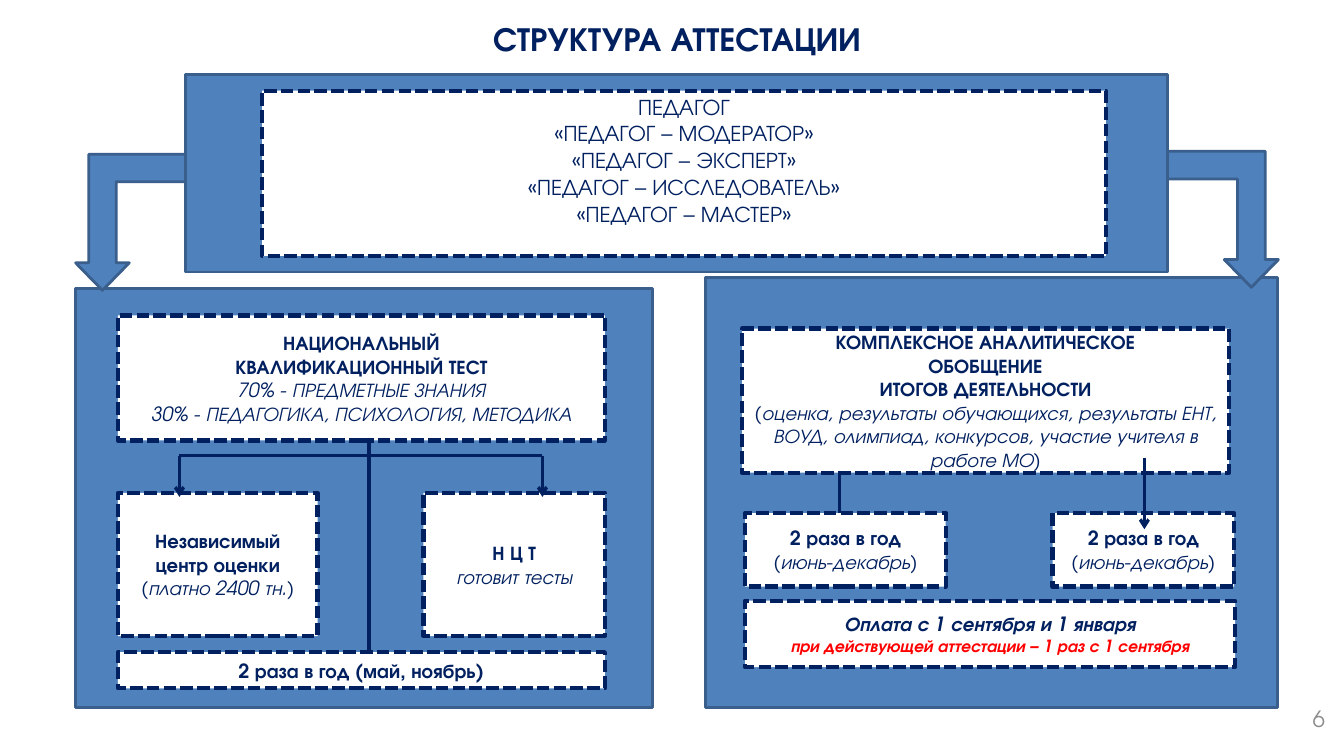
from pptx import Presentation
from pptx.dml.color import RGBColor
from pptx.enum.dml import MSO_LINE
from pptx.enum.shapes import MSO_CONNECTOR, MSO_SHAPE
from pptx.enum.text import MSO_ANCHOR, PP_ALIGN
from pptx.oxml.ns import qn
from pptx.util import Inches, Pt
from lxml.etree import SubElement

FONT = "TeX Gyre Adventor"
NAVY, BLUE, EDGE = "002060", "4F81BD", "3A5F8C"
WHITE, RED, GREY = "FFFFFF", "FF0000", "8C8C8C"


def color(value):
    return RGBColor.from_string(value)


def text(content, size=14, color=NAVY, bold=False, italic=False):
    """Describe one paragraph and its format."""
    return {"content": content, "size": size, "color": color,
            "bold": bold, "italic": italic}


class SlideBuilder:
    def __init__(self, slide):
        self.shapes = slide.shapes

    def set_text(self, sp, lines, align=PP_ALIGN.CENTER, anchor=MSO_ANCHOR.MIDDLE):
        tf = sp.text_frame
        tf.word_wrap = True
        tf.vertical_anchor = anchor
        for i, line in enumerate(lines):
            p = tf.add_paragraph() if i else tf.paragraphs[0]
            p.alignment = align
            r = p.add_run()
            r.text = line["content"]
            r.font.name = FONT
            r.font.size = Pt(line["size"])
            r.font.bold = line["bold"]
            r.font.italic = line["italic"]
            r.font.color.rgb = color(line["color"])

    def shape(self, kind, at, fill, edge=None, width=2):
        sp = self.shapes.add_shape(kind, *map(Inches, at))
        sp.shadow.inherit = False
        sp.fill.solid()
        sp.fill.fore_color.rgb = color(fill)
        if edge:
            sp.line.color.rgb = color(edge)
            sp.line.width = Pt(width)
        else:
            sp.line.fill.background()
        return sp

    def panel(self, *at):
        self.shape(MSO_SHAPE.RECTANGLE, at, BLUE, EDGE)

    def title(self, at, line):
        self.set_text(self.shape(MSO_SHAPE.RECTANGLE, at, WHITE), [line])

    def card(self, at, *lines, anchor=MSO_ANCHOR.MIDDLE):
        """White box with a dashed navy border."""
        sp = self.shape(MSO_SHAPE.RECTANGLE, at, WHITE, NAVY, 3)
        sp.line.dash_style = MSO_LINE.SQUARE_DOT
        self.set_text(sp, lines, anchor=anchor)
        return sp

    def bent_arrow(self, at, to_right=False):
        sp = self.shape(MSO_SHAPE.BENT_UP_ARROW, at, BLUE, EDGE)
        for i, value in enumerate((0.25, 0.244, 0.25)):
            sp.adjustments[i] = value
        sp.rotation = 180
        if to_right:
            sp.element.spPr.find(qn("a:xfrm")).set("flipH", "1")

    def line(self, x1, y1, x2, y2, arrow=True):
        c = self.shapes.add_connector(MSO_CONNECTOR.STRAIGHT,
                                      *map(Inches, (x1, y1, x2, y2)))
        c.line.color.rgb = color(NAVY)
        c.line.width = Pt(2.25)
        spPr = c.element.spPr
        if arrow:
            SubElement(spPr.find(qn("a:ln")), qn("a:tailEnd"), type="arrow")
        SubElement(spPr, qn("a:effectLst"))

    def label(self, at, line, align):
        self.set_text(self.shapes.add_textbox(*map(Inches, at)), [line], align)


def build_header(s):
    s.title((0.75, 0.22, 11.93, 0.31), text("СТРУКТУРА АТТЕСТАЦИИ", 24, bold=True))
    levels = ["ПЕДАГОГ"] + [f"«ПЕДАГОГ – {level}»" for level in
                            ("МОДЕРАТОР", "ЭКСПЕРТ", "ИССЛЕДОВАТЕЛЬ", "МАСТЕР")]
    sp = s.card((2.6, 0.9, 8.37, 1.64), *[text(level, 16) for level in levels],
                anchor=MSO_ANCHOR.TOP)
    sp.text_frame.margin_top = Inches(0.02)


def build_test_side(s):
    left, width = 1.17, 4.83
    s.card((left, 3.13, width, 1.24),
           text("НАЦИОНАЛЬНЫЙ", bold=True),
           text("КВАЛИФИКАЦИОННЫЙ ТЕСТ", bold=True),
           text("70% - ПРЕДМЕТНЫЕ ЗНАНИЯ", italic=True),
           text("30% - ПЕДАГОГИКА, ПСИХОЛОГИЯ, МЕТОДИКА", italic=True))
    s.card((left, 4.89, 1.98, 1.42),
           text("Независимый центр оценки", bold=True),
           text("(платно 2400 тн.)", italic=True))
    s.card((4.2, 4.89, 1.8, 1.42),
           text("Н Ц Т", bold=True), text("готовит тесты", italic=True))
    s.line(3.66, 4.37, 3.66, 6.59)
    s.card((left, 6.47, width, 0.36), text("2 раза в год (май, ноябрь)", bold=True))
    s.bent_arrow((0.75, 1.53, 1.09, 1.35))
    branches, bar = (1.78, 5.38), 4.52
    s.line(branches[0], bar, branches[1], bar, arrow=False)
    for x in branches:
        s.line(x, bar, x, 4.93)


def build_summary_side(s):
    s.bent_arrow((11.58, 1.5, 1.1, 1.35), to_right=True)
    s.card((7.36, 3.26, 4.83, 1.43),
           text("КОМПЛЕКСНОЕ АНАЛИТИЧЕСКОЕ", bold=True),
           text("ОБОБЩЕНИЕ", bold=True),
           text("ИТОГОВ ДЕЯТЕЛЬНОСТИ", bold=True),
           text("(оценка, результаты обучающихся, результаты ЕНТ, ВОУД, "
                "олимпиад, конкурсов, участие учителя в работе МО)", italic=True))
    s.line(8.33, 4.68, 8.33, 5.36)
    for left, width in ((7.39, 1.99), (10.44, 1.8)):
        s.card((left, 5.09, width, 0.73),
               text("2 раза в год", bold=True), text("(июнь-декабрь)", italic=True))
    s.line(11.35, 4.54, 11.35, 5.25)
    s.card((7.39, 5.96, 4.86, 0.66),
           text("Оплата с 1 сентября и 1 января", bold=True, italic=True),
           text("при действующей аттестации – 1 раз с 1 сентября", 12, RED,
                bold=True, italic=True))


def main():
    prs = Presentation()
    prs.slide_width, prs.slide_height = Inches(13.33), Inches(7.5)
    s = SlideBuilder(prs.slides.add_slide(prs.slide_layouts[6]))
    s.panel(1.84, 0.74, 9.74, 1.96)
    s.panel(0.75, 2.86, 5.72, 4.16)
    s.panel(7, 2.75, 5.67, 4.27)
    build_header(s)
    build_test_side(s)
    build_summary_side(s)
    s.label((10.13, 6.93, 3.11, 0.4), text("6", 16, GREY), PP_ALIGN.RIGHT)
    prs.save("out.pptx")


if __name__ == "__main__":
    main()
